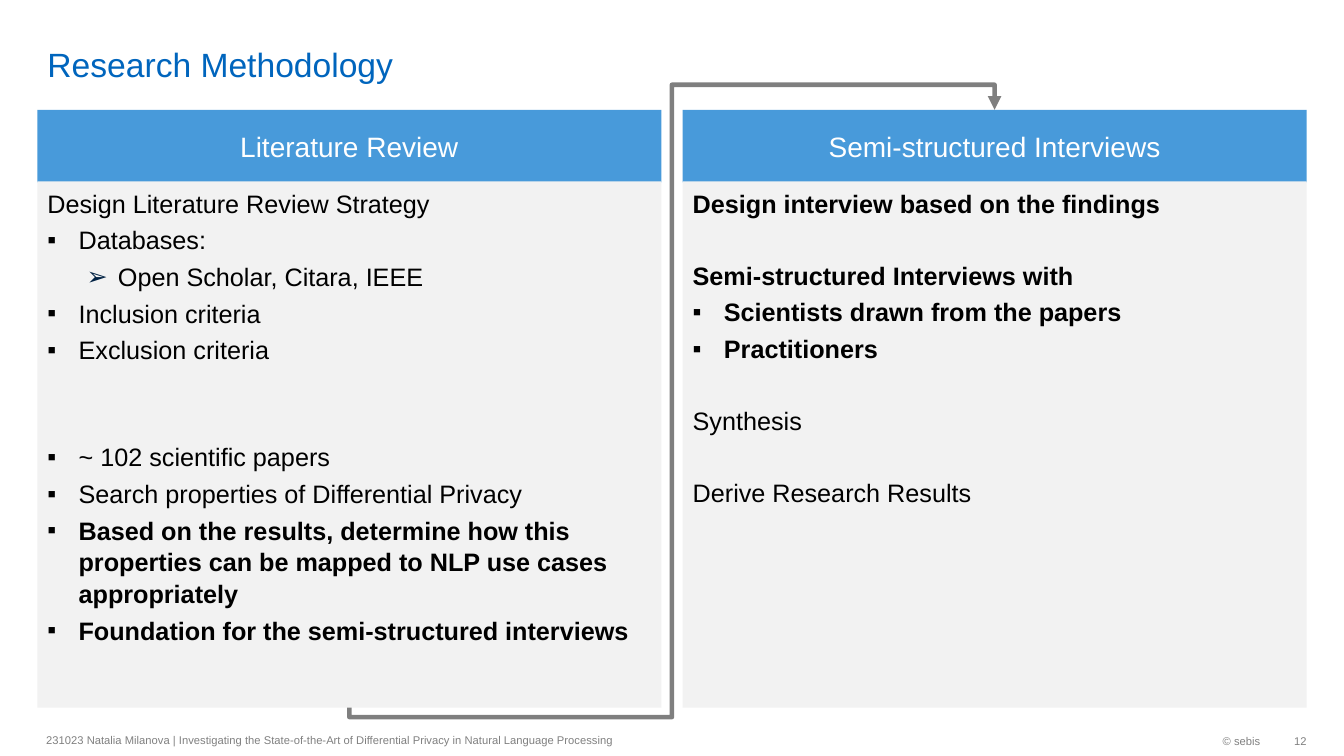
import pptx
import pptx.util
import pptx.dml.color
import pptx.enum.shapes
import pptx.enum.text
import pptx.oxml
import pptx.oxml.ns

Inches, Pt = pptx.util.Inches, pptx.util.Pt
RGB = pptx.dml.color.RGBColor
ALIGN = pptx.enum.text.PP_ALIGN
ANCHOR = pptx.enum.text.MSO_ANCHOR
qn = pptx.oxml.ns.qn

BLUE = RGB(0x00, 0x65, 0xBD)
SKY = RGB(0x48, 0x9A, 0xDA)
PALE = RGB(0xF2, 0xF2, 0xF2)
GRAY = RGB(0x80, 0x80, 0x80)
NAVY = RGB(0x00, 0x21, 0x43)
WHITE = RGB(0xFF, 0xFF, 0xFF)
BLACK = RGB(0, 0, 0)

TOP, HEAD, BODY, WIDE = 1.09, 0.72, 5.22, 6.19
LEFTS = (0.37, 6.77)
STEP = 25.2  # height of one list line with its spacing, in points

# Each line: text, kind, bold, empty lines above
REVIEW = [
    ("Design Literature Review Strategy", "plain", False, 0),
    ("Databases:", "item", False, 0),
    ("Open Scholar, Citara, IEEE", "sub", False, 0),
    ("Inclusion criteria", "item", False, 0),
    ("Exclusion criteria", "item", False, 0),
    ("~ 102 scientific papers", "item", False, 2),
    ("Search properties of Differential Privacy", "item", False, 0),
    ("Based on the results, determine how this properties can be mapped "
     "to NLP use cases appropriately", "item", True, 0),
    ("Foundation for the semi-structured interviews", "item", True, 0),
]
TALKS = [
    ("Design interview based on the findings", "plain", True, 0),
    ("Semi-structured Interviews with", "plain", True, 1),
    ("Scientists drawn from the papers", "item", True, 0),
    ("Practitioners", "item", True, 0),
    ("Synthesis", "plain", False, 1),
    ("Derive Research Results", "plain", False, 1),
]
# Each kind: level, left margin, hanging indent, mark, mark colour
KINDS = {
    "plain": (0, 0, 0, None, None),
    "item": (0, 0.31, -0.31, "▪", BLACK),
    "sub": (1, 0.7, -0.31, "➢", NAVY),
}


class Deck:
    font = "Arial"

    def __init__(self):
        self.show = pptx.Presentation()
        self.show.slide_width = Inches(13.33)
        self.show.slide_height = Inches(7.5)
        self.slide = self.show.slides.add_slide(self.show.slide_layouts[4])

    def apply(self, item, form):
        for name, value in form.items():
            setattr(item, name, value)

    def place(self, shape, box):
        names = ("left", "top", "width", "height")
        self.apply(shape, dict(zip(names, map(Inches, box))))

    def frame(self, shape, anchor, **form):
        frame = shape.text_frame
        self.apply(frame, {"word_wrap": True, "vertical_anchor": anchor,
                           "auto_size": pptx.enum.text.MSO_AUTO_SIZE.NONE,
                           **form})
        return frame

    def label(self, par, text, size, color, bold=False):
        par.text = text
        self.apply(par.font, {"name": self.font, "size": Pt(size), "bold": bold})
        par.font.color.rgb = color

    def fill(self, shape, color):
        shape.fill.solid()
        shape.fill.fore_color.rgb = color

    def title(self, text, box):
        shape = self.slide.shapes.title
        self.place(shape, box)
        frame = self.frame(shape, ANCHOR.BOTTOM, margin_top=0, margin_bottom=0)
        par = frame.paragraphs[0]
        self.label(par, text, 24, BLUE)
        par.alignment = ALIGN.LEFT

    def header(self, idx, text, box):
        shape = self.slide.placeholders[idx]
        self.place(shape, box)
        self.fill(shape, SKY)
        par = self.frame(shape, ANCHOR.MIDDLE).paragraphs[0]
        self.label(par, text, 20, WHITE)
        self.apply(par, {"alignment": ALIGN.CENTER, "space_before": Pt(0)})

    def mark(self, par, kind):
        """Set the level, indent and bullet of a paragraph."""
        level, left, hang, char, color = KINDS[kind]
        par.level = level
        prop = par._p.get_or_add_pPr()
        prop.set("marL", str(Inches(left)))
        prop.set("indent", str(Inches(hang)))
        if char is None:
            prop.append(pptx.oxml.parse_xml(
                f'<a:buNone {pptx.oxml.ns.nsdecls("a")}/>'))
            return
        for tag, body in (("buClr", f'><a:srgbClr val="{color}"/></a:buClr>'),
                          ("buFont", f' typeface="{self.font}"/>'),
                          ("buChar", f' char="{char}"/>')):
            prop.append(pptx.oxml.parse_xml(
                f'<a:{tag} {pptx.oxml.ns.nsdecls("a")}{body}'))

    def list(self, idx, lines, box):
        shape = self.slide.placeholders[idx]
        self.place(shape, box)
        self.fill(shape, PALE)
        frame = self.frame(shape, ANCHOR.TOP)
        for num, (text, kind, bold, gap) in enumerate(lines):
            par = frame.add_paragraph() if num else frame.paragraphs[0]
            self.mark(par, kind)
            self.label(par, text, 18, BLACK, bold)
            space = 3.5 + gap * STEP if num else 0
            self.apply(par, {"space_before": Pt(space), "line_spacing": 1.05})

    def note(self, text, box, align, **form):
        shape = self.slide.shapes.add_textbox(*map(Inches, box))
        par = self.frame(shape, ANCHOR.MIDDLE, **form).paragraphs[0]
        self.label(par, text, 8, GRAY)
        par.alignment = align

    def elbow(self, start, end, bends):
        """Draw an arrow that leaves downwards and enters from above."""
        midx, midy = (start[0] + end[0]) / 2, (start[1] + end[1]) / 2
        # The frame is turned by 90 degrees, so its sides swap
        halfw, halfh = (start[1] - end[1]) / 2, (end[0] - start[0]) / 2
        line = self.slide.shapes.add_connector(
            pptx.enum.shapes.MSO_CONNECTOR.ELBOW,
            Inches(midx + halfw), Inches(midy + halfh),
            Inches(midx - halfw), Inches(midy - halfh))
        line.line.width = Pt(3.25)
        line.line.color.rgb = BLACK
        prop = line._element.spPr
        prop.find(qn("a:xfrm")).set("rot", "5400000")
        geom = prop.find(qn("a:prstGeom"))
        geom.set("prst", "bentConnector5")
        guides = geom.get_or_add_avLst()
        for num, bend in enumerate(bends, 1):
            guide = guides.makeelement(qn("a:gd"), {
                "name": f"adj{num}", "fmla": f"val {round(bend * 100000)}"})
            guides.append(guide)
        stroke = prop.find(qn("a:ln"))
        color = stroke.find(".//" + qn("a:srgbClr"))
        color.append(color.makeelement(qn("a:alpha"), {"val": "50000"}))
        stroke.append(stroke.makeelement(qn("a:tailEnd"), {"type": "triangle"}))
        prop.append(prop.makeelement(qn("a:effectLst"), {}))


def main():
    deck = Deck()
    deck.title("Research Methodology", (0.37, 0.05, 11.58, 0.79))
    cols = (("Literature Review", REVIEW), ("Semi-structured Interviews", TALKS))
    for num, (left, (head, lines)) in enumerate(zip(LEFTS, cols)):
        deck.header(1 + 2 * num, head, (left, TOP, WIDE, HEAD))
        deck.list(2 + 2 * num, lines, (left, 1.8, WIDE, BODY))
    deck.note("© sebis", (10.26, 7.19, 2.34, 0.32), ALIGN.RIGHT)
    deck.note("231023 Natalia Milanova | Investigating the State-of-the-Art of "
              "Differential Privacy in Natural Language Processing",
              (0.36, 7.18, 6.3, 0.32), ALIGN.LEFT)
    deck.note("12", (12.6, 7.19, 0.36, 0.32), ALIGN.RIGHT, margin_right=0)
    start, end = [left + WIDE / 2 for left in LEFTS]
    deck.elbow((start, 1.8 + BODY), (end, TOP), (-0.016, 0.5, 1.042))
    deck.show.save("out.pptx")


if __name__ == "__main__":
    main()
